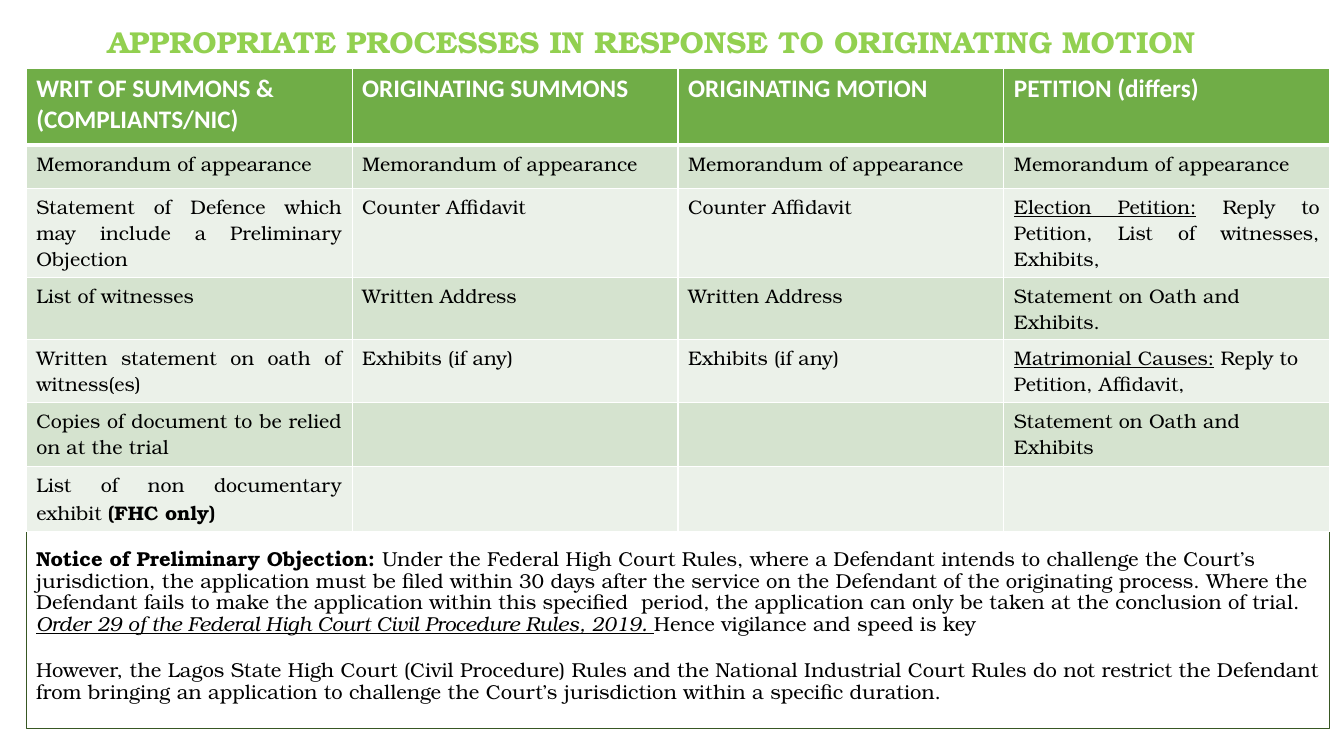
import dataclasses

import lxml.etree
import pptx
import pptx.dml.color
import pptx.enum.shapes
import pptx.enum.text
import pptx.oxml.ns
import pptx.util

Inches = pptx.util.Inches
Pt = pptx.util.Pt
Align = pptx.enum.text.PP_ALIGN
Anchor = pptx.enum.text.MSO_ANCHOR


def colour(code):
    return pptx.dml.color.RGBColor.from_string(code)


@dataclasses.dataclass(frozen=True)
class Theme:
    serif: str = "TeX Gyre Bonum"
    sans: str = "Calibri"
    title: str = "92D050"
    header: str = "70AD47"
    bands: tuple = ("D5E3CF", "EBF1E9")
    white: str = "FFFFFF"
    black: str = "000000"
    frame: str = "385723"
    title_size: float = 21.6
    header_size: float = 18
    note_size: float = 14.4
    cell_size: float = 14


class ProcessSlide:
    """Draws the slide's elements in one theme."""

    def __init__(self, page, theme):
        self.page = page
        self.theme = theme

    def add_spans(self, para, spans, size, code, font=None):
        for words, *marks in spans:
            span = para.add_run()
            span.text = words
            span.font.name = font or self.theme.serif
            span.font.size = Pt(size)
            span.font.color.rgb = colour(code)
            span.font.bold = "bold" in marks
            span.font.italic = "italic" in marks
            span.font.underline = "underline" in marks

    def line(self, parent, position, tag, code, width):
        name = pptx.oxml.ns.qn
        line = lxml.etree.Element(name(tag), w=str(Pt(width)))
        fill = lxml.etree.SubElement(line, name("a:solidFill"))
        lxml.etree.SubElement(fill, name("a:srgbClr"), val=code)
        parent.insert(position, line)

    def title(self, words, left, top, width, height):
        box = self.page.shapes.add_textbox(*map(Inches, (left, top, width, height)))
        box.text_frame.word_wrap = True
        box.text_frame.vertical_anchor = Anchor.MIDDLE
        para = box.text_frame.paragraphs[0]
        para.line_spacing = 0.9
        self.add_spans(para, [(words, "bold")], self.theme.title_size, self.theme.title)
        properties = para.runs[0]._r.get_or_add_rPr()
        self.line(properties, 0, "a:ln", self.theme.title, 0.75)

    def note(self, paragraphs, left, top, width, height):
        box = self.page.shapes.add_shape(
            pptx.enum.shapes.MSO_SHAPE.RECTANGLE,
            *map(Inches, (left, top, width, height)))
        box.shadow.inherit = False
        box.fill.background()
        box.line.color.rgb = colour(self.theme.frame)
        box.line.width = Pt(0.75)
        frame = box.text_frame
        frame.word_wrap = True
        frame.vertical_anchor = Anchor.MIDDLE
        for index, (gap, spans) in enumerate(paragraphs):
            para = frame.add_paragraph() if index else frame.paragraphs[0]
            para.alignment = Align.LEFT
            para.line_spacing = 0.9
            para.space_before = Pt(gap)
            self.add_spans(para, spans, self.theme.note_size, self.theme.black)

    def cell(self, cell, spans, row, justified):
        theme = self.theme
        para = cell.text_frame.paragraphs[0]
        para.alignment = Align.JUSTIFY if justified else Align.LEFT
        if row:
            self.add_spans(para, spans, theme.cell_size, theme.black)
        else:
            self.add_spans(para, spans, theme.header_size, theme.white, theme.sans)
        cell.fill.solid()
        cell.fill.fore_color.rgb = colour(
            theme.bands[(row - 1) % 2] if row else theme.header)
        properties = cell._tc.get_or_add_tcPr()
        for position, side in enumerate("LRTB"):
            thick = (row, side) in ((0, "B"), (1, "T"))
            self.line(properties, position, f"a:ln{side}", theme.white, 3 if thick else 1)

    def table(self, rows, heights, justified, left, top, width):
        columns = len(rows[0])
        table = self.page.shapes.add_table(
            len(rows), columns, *map(Inches, (left, top, width, sum(heights)))).table
        for column in table.columns:
            column.width = Inches(width / columns)
        for row, (texts, height) in enumerate(zip(rows, heights)):
            table.rows[row].height = Inches(height)
            for column, text in enumerate(texts):
                spans = [(text,)] if isinstance(text, str) else text
                if not row:
                    spans = [(text, "bold")]
                self.cell(table.cell(row, column), spans if text else [], row,
                          (row, column) in justified)


PROCESSES = [
    ["WRIT OF SUMMONS & (COMPLIANTS/NIC)", "ORIGINATING SUMMONS",
     "ORIGINATING MOTION", "PETITION (differs)"],
    ["Memorandum of appearance"] * 4,
    ["Statement of Defence which may include a Preliminary Objection",
     "Counter Affidavit", "Counter Affidavit",
     [("Election Petition:", "underline"),
      (" Reply to Petition, List of witnesses, Exhibits,",)]],
    ["List of witnesses", "Written Address", "Written Address",
     "Statement on Oath and Exhibits."],
    ["Written statement on oath of witness(es)", "Exhibits (if any)",
     "Exhibits (if any)",
     [("Matrimonial Causes:", "underline"), (" Reply to Petition, Affidavit,",)]],
    ["Copies of document to be relied on at the trial", "", "",
     "Statement on Oath and Exhibits"],
    [[("List of non documentary exhibit ",), ("(FHC only)", "bold")], "", "", ""],
]
ROW_HEIGHTS = [0.76, 0.43, 0.87, 0.43, 0.61, 0.64, 0.61]
JUSTIFIED = ({(row, 0) for row in range(1, 7)}
             | {(1, column) for column in range(4)} | {(2, 3)})
NOTE = [
    (0, [("Notice of Preliminary Objection: ", "bold"),
         ("Under the Federal High Court Rules, where a Defendant intends to challenge "
          "the Court’s jurisdiction, the application must be filed within 30 days after "
          "the service on the Defendant of the originating process. Where the Defendant "
          "fails to make the application within this specified  period, the application "
          "can only be taken at the conclusion of trial.",)]),
    (0, [("Order 29 of the Federal High Court Civil Procedure Rules, 2019. ",
          "italic", "underline"),
         ("Hence vigilance and speed is key",)]),
    (17.5, [("However, the Lagos State High Court (Civil Procedure) Rules and the "
             "National Industrial Court Rules do not restrict the Defendant from "
             "bringing an application to challenge the Court’s jurisdiction within "
             "a specific duration.",)]),
]


def main():
    deck = pptx.Presentation()
    deck.slide_width = Inches(13.33)
    deck.slide_height = Inches(7.5)
    slide = ProcessSlide(deck.slides.add_slide(deck.slide_layouts[6]), Theme())
    slide.note(NOTE, 0.26, 5.2, 12.93, 2.03)
    slide.table(PROCESSES, ROW_HEIGHTS, JUSTIFIED, 0.26, 0.68, 12.93)
    slide.title("APPROPRIATE PROCESSES IN RESPONSE TO ORIGINATING MOTION",
                0.97, 0.18, 11.5, 0.5)
    deck.save("out.pptx")


if __name__ == "__main__":
    main()
